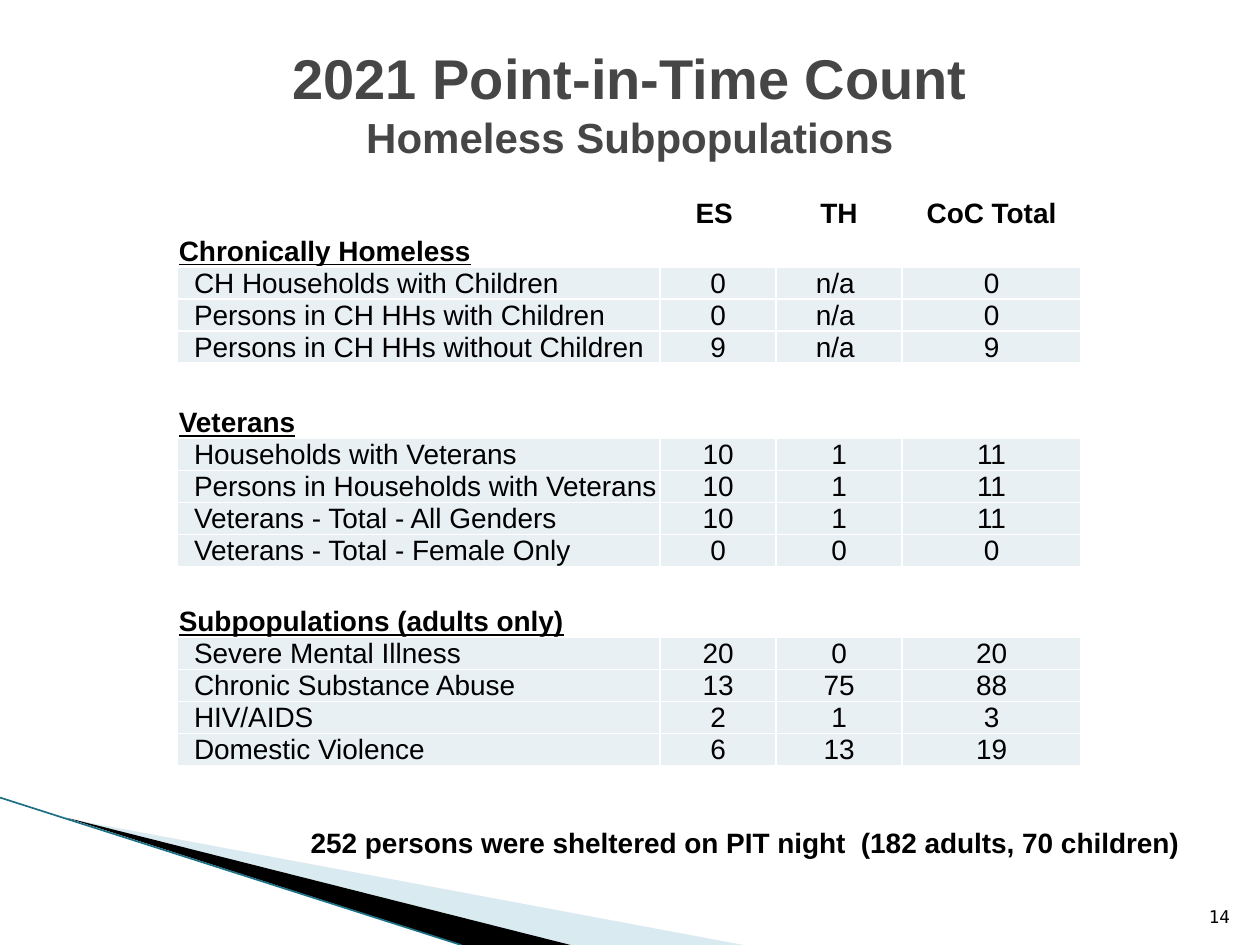
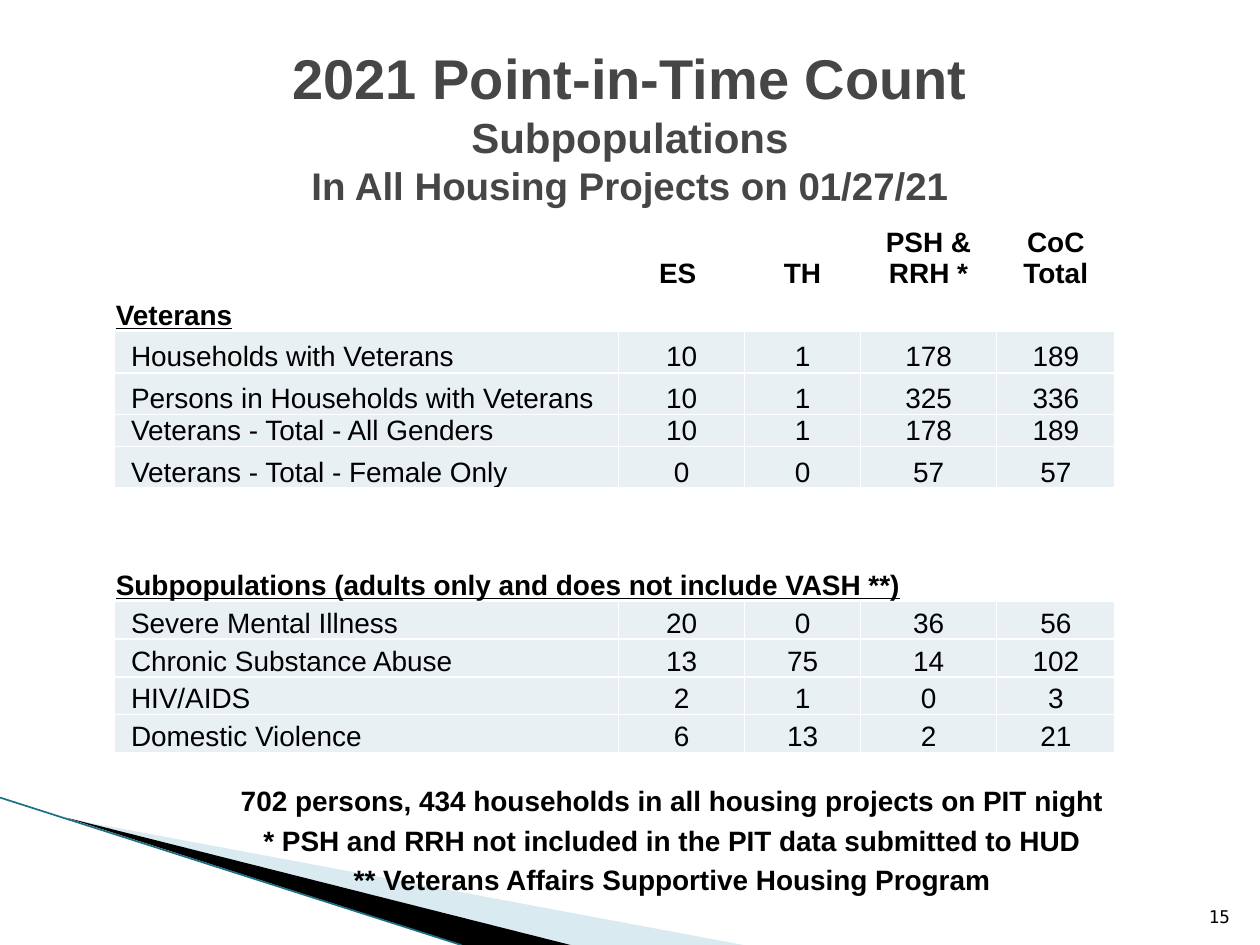
from lxml import etree
from pptx import Presentation
from pptx.dml.color import RGBColor
from pptx.enum.shapes import MSO_CONNECTOR
from pptx.enum.text import MSO_ANCHOR, PP_ALIGN
from pptx.oxml.ns import qn
from pptx.util import Inches, Pt

LEFT, CENTER, RIGHT = PP_ALIGN.LEFT, PP_ALIGN.CENTER, PP_ALIGN.RIGHT
TOP, BOTTOM = MSO_ANCHOR.TOP, MSO_ANCHOR.BOTTOM
STRAIGHT = MSO_CONNECTOR.STRAIGHT

COLORS = {"title": "464646", "text": "000000", "row": "E8F0F4", "border": "FFFFFF",
          "pale wedge": "A0CBDC", "dark wedge": "000000", "edge": "1B7085"}

# Content: a row is a tuple of cells, a section heading is a string, a gap is None
SUBPOPULATIONS = ("Severe Mental Illness", "Chronic Substance Abuse",
                  "HIV/AIDS", "Domestic Violence")
VETERANS = ("Households with Veterans", "Persons in Households with Veterans",
            "Veterans - Total - All Genders", "Veterans - Total - Female Only")


def labelled(labels, counts):
    return [(label, *row) for label, row in zip(labels, counts)]


SLIDES = [
    {
        "number": "14",
        "title": [("2021 Point-in-Time Count", 32), ("Homeless Subpopulations", 24)],
        "title height": 1.1,
        "table at": (1.41, 1.42),
        "columns": [3.83, 0.92, 1, 1.42],
        "header": ("", "ES ", "TH", "CoC Total"),
        "rows": [
            "Chronically Homeless",
            ("CH Households with Children", "0", "n/a ", "0"),
            ("Persons in CH HHs with Children", "0", "n/a ", "0"),
            ("Persons in CH HHs without Children", "9", "n/a ", "9"),
            None,
            "Veterans",
            *labelled(VETERANS, [("10", "1", "11")] * 3 + [("0", "0", "0")]),
            None,
            "Subpopulations (adults only)",
            *labelled(SUBPOPULATIONS, [("20", "0", "20"), ("13", "75", "88"),
                                       ("2", "1", "3"), ("6", "13", "19")]),
        ],
        "heights": [0.4, 0.3] + [0.25] * 3 + [0.3, 0.3] + [0.25] * 4 + [0.31] + [0.25] * 5,
        "notes at": (2.33, 6.5, 7.17, 0.58),
        "notes": ["252 persons were sheltered on PIT night  (182 adults, 70 children)"],
    },
    {
        "number": "15",
        "title": [("2021 Point-in-Time Count", 32), ("Subpopulations", 24),
                  ("In All Housing Projects on 01/27/21", 22)],
        "title height": 1.4,
        "table at": (0.91, 1.71),
        "columns": [4, 1, 0.92, 1.08, 0.94],
        "header": ("", "ES ", "TH", "PSH & RRH *", "CoC\nTotal"),
        "rows": [
            "Veterans",
            *labelled(VETERANS, [("10", "1", "178", "189"), ("10", "1", "325", "336"),
                                 ("10", "1", "178", "189"), ("0", "0", "57", "57")]),
            None,
            "Subpopulations (adults only and does not include VASH **)",
            *labelled(SUBPOPULATIONS, [("20", "0", "36", "56"), ("13", "75", "14", "102"),
                                       ("2", "1", "0", "3"), ("6", "13", "2", "21")]),
        ],
        "heights": [0.59, 0.33, 0.33, 0.33, 0.25, 0.33, 0.59, 0.31] + [0.3] * 4,
        "notes at": (1.17, 6.17, 8.33, 1.03),
        "notes": ["702 persons, 434 households in all housing projects on PIT night",
                  "* PSH and RRH not included in the PIT data submitted to HUD",
                  "** Veterans Affairs Supportive Housing Program"],
    },
]

# Corner decoration shared by the slides
WEDGES = [
    ("pale wedge", 40, [(0.55, 6.5), (5.9, 7.5), (4.53, 7.5)]),
    ("dark wedge", 100, [(0.53, 6.49), (4.53, 7.5), (3.67, 7.5)]),
]
EDGE = (0, 6.33, 3.66, 7.5)

# Text formats
TITLE = {"name": "Arial", "bold": True}
BODY = {"name": "Arial", "size": Pt(16), "bold": False}
STRONG = BODY | {"bold": True}
HEADING = STRONG | {"underline": True}
NUMBER = {"name": "DejaVu Sans Mono", "size": Pt(10)}


def color(name):
    return RGBColor.from_string(COLORS[name])


def write(paragraph, text, style, align, color_name="text"):
    paragraph.alignment = align
    run = paragraph.add_run()
    run.text = text
    for attribute, value in style.items():
        setattr(run.font, attribute, value)
    run.font.color.rgb = color(color_name)


def add_paragraphs(frame, lines, align, color_name="text", **spacing):
    for index, (text, style) in enumerate(lines):
        paragraph = frame.add_paragraph() if index else frame.paragraphs[0]
        write(paragraph, text, style, align, color_name)
        for attribute, value in spacing.items():
            if index or attribute != "space_before":
                setattr(paragraph, attribute, value)


def add_text(slide, box, lines, align, anchor=TOP, **options):
    frame = slide.shapes.add_textbox(*map(Inches, box)).text_frame
    frame.word_wrap = True
    frame.vertical_anchor = anchor
    add_paragraphs(frame, lines, align, **options)


def add_corner(slide):
    for name, opacity, points in WEDGES:
        start, *rest = [(Inches(x), Inches(y)) for x, y in points]
        builder = slide.shapes.build_freeform(*start)
        builder.add_line_segments(rest, close=True)
        wedge = builder.convert_to_shape()
        wedge.shadow.inherit = False
        wedge.line.fill.background()
        wedge.fill.solid()
        wedge.fill.fore_color.rgb = color(name)
        if opacity < 100:
            fill_color = wedge.fill._xPr.find(".//" + qn("a:srgbClr"))
            etree.SubElement(fill_color, qn("a:alpha"), val=str(opacity * 1000))
    edge = slide.shapes.add_connector(STRAIGHT, *map(Inches, EDGE))
    edge.line.color.rgb = color("edge")
    edge.line.width = Pt(0.95)
    etree.SubElement(edge._element.spPr, qn("a:effectLst"))


def set_borders(cell):
    properties = cell._tc.get_or_add_tcPr()
    for position, side in enumerate(("lnL", "lnR", "lnT", "lnB")):
        line = etree.Element(qn(f"a:{side}"), w=str(Pt(1)))
        fill = etree.SubElement(line, qn("a:solidFill"))
        etree.SubElement(fill, qn("a:srgbClr"), val=COLORS["border"])
        properties.insert(position, line)


def fill_cell(cell, text, style, align, shaded):
    cell.vertical_anchor = BOTTOM
    cell.margin_left = Inches(0.13 if shaded and align == LEFT else 0.01)
    cell.margin_right = Inches(0.01)
    cell.margin_top = cell.margin_bottom = 0
    if shaded:
        cell.fill.solid()
        cell.fill.fore_color.rgb = color("row")
    else:
        cell.fill.background()
    set_borders(cell)
    if text:
        # Slightly tight lines keep the low rows at their set height
        add_paragraphs(cell.text_frame, [(line, style) for line in text.split("\n")], align,
                       line_spacing=1.0 if style is STRONG else 0.95)


def add_count_table(slide, content):
    columns, heights = content["columns"], content["heights"]
    box = (*content["table at"], sum(columns), sum(heights))
    table = slide.shapes.add_table(len(heights), len(columns), *map(Inches, box)).table
    table.first_row = table.horz_banding = False
    for column, width in zip(table.columns, columns):
        column.width = Inches(width)
    for row, height in zip(table.rows, heights):
        row.height = Inches(height)

    blanks = ("",) * (len(columns) - 1)
    for row_index, row in enumerate([content["header"], *content["rows"]]):
        shaded = row_index > 0 and isinstance(row, tuple)
        style = BODY if shaded else STRONG
        if not isinstance(row, tuple):
            style = HEADING
            row = (row or "", *blanks)
        for column_index, text in enumerate(row):
            align = CENTER if column_index else LEFT
            fill_cell(table.cell(row_index, column_index), text, style, align, shaded)
        if row[0].startswith("Subpopulations"):
            table.cell(row_index, 0).merge(table.cell(row_index, len(columns) - 1))


def build_slide(presentation, content):
    slide = presentation.slides.add_slide(presentation.slide_layouts[6])
    add_corner(slide)
    title = [(text, TITLE | {"size": Pt(size)}) for text, size in content["title"]]
    add_text(slide, (0.5, 0.3, 9, content["title height"]), title, CENTER,
             color_name="title")
    add_count_table(slide, content)
    add_text(slide, content["notes at"], [(note, STRONG) for note in content["notes"]],
             CENTER, space_before=Pt(3.5))
    add_text(slide, (9.46, 7.01, 0.4, 0.4), [(content["number"], NUMBER)], RIGHT, BOTTOM)


def main():
    presentation = Presentation()
    presentation.slide_width, presentation.slide_height = Inches(10), Inches(7.5)
    for content in SLIDES:
        build_slide(presentation, content)
    presentation.save("out.pptx")


if __name__ == "__main__":
    main()
